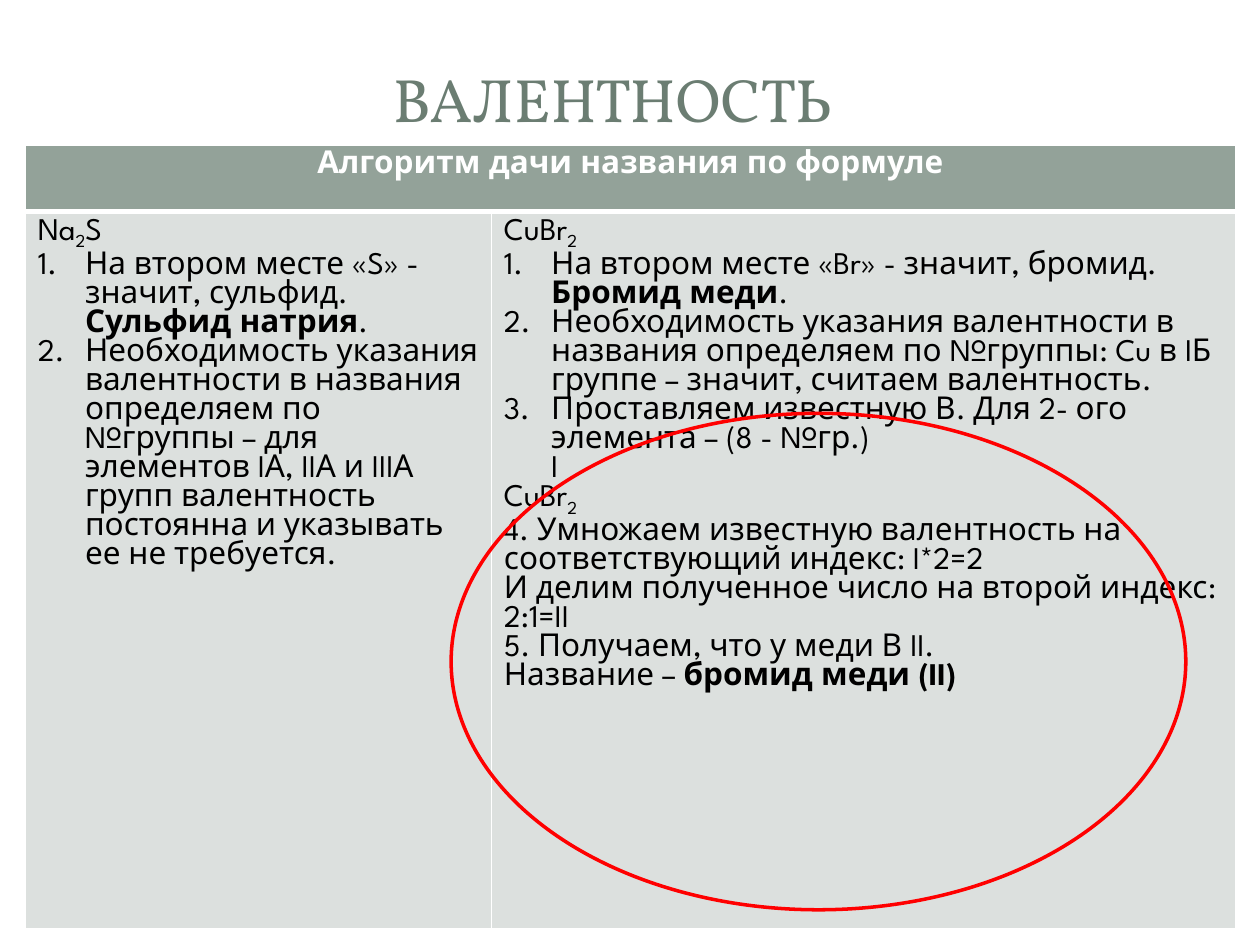
from dataclasses import dataclass

from lxml import etree
from pptx import Presentation
from pptx.dml.color import RGBColor
from pptx.enum.shapes import MSO_SHAPE
from pptx.enum.text import MSO_ANCHOR, PP_ALIGN
from pptx.oxml.ns import qn
from pptx.util import Pt

CENTER, LEFT = PP_ALIGN.CENTER, PP_ALIGN.LEFT
MIDDLE = MSO_ANCHOR.MIDDLE
OVAL = MSO_SHAPE.OVAL

WHITE = RGBColor(0xFF, 0xFF, 0xFF)
BLACK = RGBColor(0x00, 0x00, 0x00)
RED = RGBColor(0xFF, 0x00, 0x00)
TITLE_GREEN = RGBColor(0x6B, 0x7D, 0x72)
HEADER_GREEN = RGBColor(0x93, 0xA2, 0x99)
BODY_GREY = RGBColor(0xDC, 0xE0, 0xDE)

TITLE_FONT, BODY_FONT = "Vollkorn", "League Spartan"
TITLE_SIZE, BODY_SIZE = 35, 18
INDENT = 27
COLUMN_WIDTHS = (266.4, 425.5)
ROW_HEIGHTS = (38.2, 409.7)


@dataclass(frozen=True)
class Span:
    text: str
    bold: bool = False
    subscript: bool = False


@dataclass(frozen=True)
class Line:
    spans: tuple[Span, ...]
    numbered: bool = False
    indented: bool = False


def plain(text: str) -> Line:
    return Line((Span(text),))


def step(*spans: Span) -> Line:
    return Line(spans, numbered=True)


COPPER_BROMIDE = Line((Span("CuBr"), Span("2", subscript=True)))

SODIUM_SULFIDE_LINES = (
    Line((Span("Na"), Span("2", subscript=True), Span("S"))),
    step(Span("На втором месте «S» - значит, сульфид. "),
         Span("Сульфид натрия", bold=True), Span(".")),
    step(Span("Необходимость указания валентности в названия определяем по "
              "№группы – для элементов IА, IIА и IIIА групп валентность "
              "постоянна и указывать ее не требуется.")),
)

COPPER_BROMIDE_LINES = (
    COPPER_BROMIDE,
    step(Span("На втором месте «Br» - значит, бромид. "),
         Span("Бромид меди", bold=True), Span(".")),
    step(Span("Необходимость указания валентности в названия определяем по "
              "№группы: Cu в IБ группе – значит, считаем валентность.")),
    step(Span("Проставляем известную В. Для 2- ого элемента – (8 - №гр.)")),
    Line((Span("I"),), indented=True),
    COPPER_BROMIDE,
    plain("4. Умножаем известную валентность на соответствующий индекс: I*2=2"),
    plain("И делим полученное число на второй индекс: 2:1=II"),
    plain("5. Получаем, что у меди В II."),
    Line((Span("Название – "), Span("бромид меди (II)", bold=True))),
)


def set_indent(paragraph, numbered: bool) -> None:
    properties = paragraph._p.get_or_add_pPr()
    properties.set("marL", str(Pt(INDENT)))
    if numbered:
        properties.set("indent", str(-Pt(INDENT)))
        numbering = etree.SubElement(properties, qn("a:buAutoNum"))
        numbering.set("type", "arabicPeriod")


def write_lines(frame, lines: tuple[Line, ...], color: RGBColor,
                align=LEFT, font: str = BODY_FONT, size: int = BODY_SIZE) -> None:
    frame.word_wrap = True
    for index, line in enumerate(lines):
        paragraph = frame.add_paragraph() if index else frame.paragraphs[0]
        paragraph.alignment = align
        if line.numbered or line.indented:
            set_indent(paragraph, line.numbered)
        paragraph.font.name = font
        paragraph.font.size = Pt(size)
        paragraph.font.color.rgb = color
        for span in line.spans:
            run = paragraph.add_run()
            run.text = span.text
            run.font.bold = span.bold
            if span.subscript:
                run.font._element.set("baseline", "-25000")


def set_borders(cell, bottom: float = 1, top: float = 1) -> None:
    """Draw white borders; they must precede the fill in the cell XML."""
    properties = cell._tc.get_or_add_tcPr()
    widths = (("a:lnL", 1), ("a:lnR", 1), ("a:lnT", top), ("a:lnB", bottom))
    for tag, width in widths:
        border = etree.SubElement(properties, qn(tag), w=str(Pt(width)))
        fill = etree.SubElement(border, qn("a:solidFill"))
        etree.SubElement(fill, qn("a:srgbClr"), val=str(WHITE))


def fill_cell(cell, color: RGBColor) -> None:
    cell.fill.solid()
    cell.fill.fore_color.rgb = color


def add_title(page) -> None:
    box = page.shapes.add_textbox(Pt(25.2), Pt(15.1), Pt(650.2), Pt(82.1))
    box.text_frame.vertical_anchor = MIDDLE
    write_lines(box.text_frame, (plain("ВАЛЕНТНОСТЬ"),), TITLE_GREEN,
                CENTER, TITLE_FONT, TITLE_SIZE)


def add_algorithm_table(page) -> None:
    table = page.shapes.add_table(
        2, 2, Pt(14.4), Pt(82.8), Pt(sum(COLUMN_WIDTHS)), Pt(sum(ROW_HEIGHTS))
    ).table
    for column, width in zip(table.columns, COLUMN_WIDTHS):
        column.width = Pt(width)
    for row, height in zip(table.rows, ROW_HEIGHTS):
        row.height = Pt(height)

    header = table.cell(0, 0)
    header.merge(table.cell(0, 1))
    for column in range(2):
        cell = table.cell(0, column)
        set_borders(cell, bottom=3)
        fill_cell(cell, HEADER_GREEN)
    heading = Line((Span("Алгоритм дачи названия по формуле", bold=True),))
    write_lines(header.text_frame, (heading,), WHITE, CENTER)

    for column, lines in enumerate((SODIUM_SULFIDE_LINES, COPPER_BROMIDE_LINES)):
        cell = table.cell(1, column)
        set_borders(cell, top=3)
        fill_cell(cell, BODY_GREY)
        write_lines(cell.text_frame, lines, BLACK)


def add_highlight(page) -> None:
    ellipse = page.shapes.add_shape(OVAL, Pt(257.8), Pt(236.2), Pt(419.8), Pt(283.7))
    ellipse.shadow.inherit = False
    ellipse.fill.background()
    ellipse.line.color.rgb = RED
    ellipse.line.width = Pt(2)


def main() -> None:
    deck = Presentation()
    deck.slide_width, deck.slide_height = Pt(720), Pt(540)
    page = deck.slides.add_slide(deck.slide_layouts[6])
    add_title(page)
    add_algorithm_table(page)
    add_highlight(page)
    deck.save("out.pptx")


if __name__ == "__main__":
    main()
